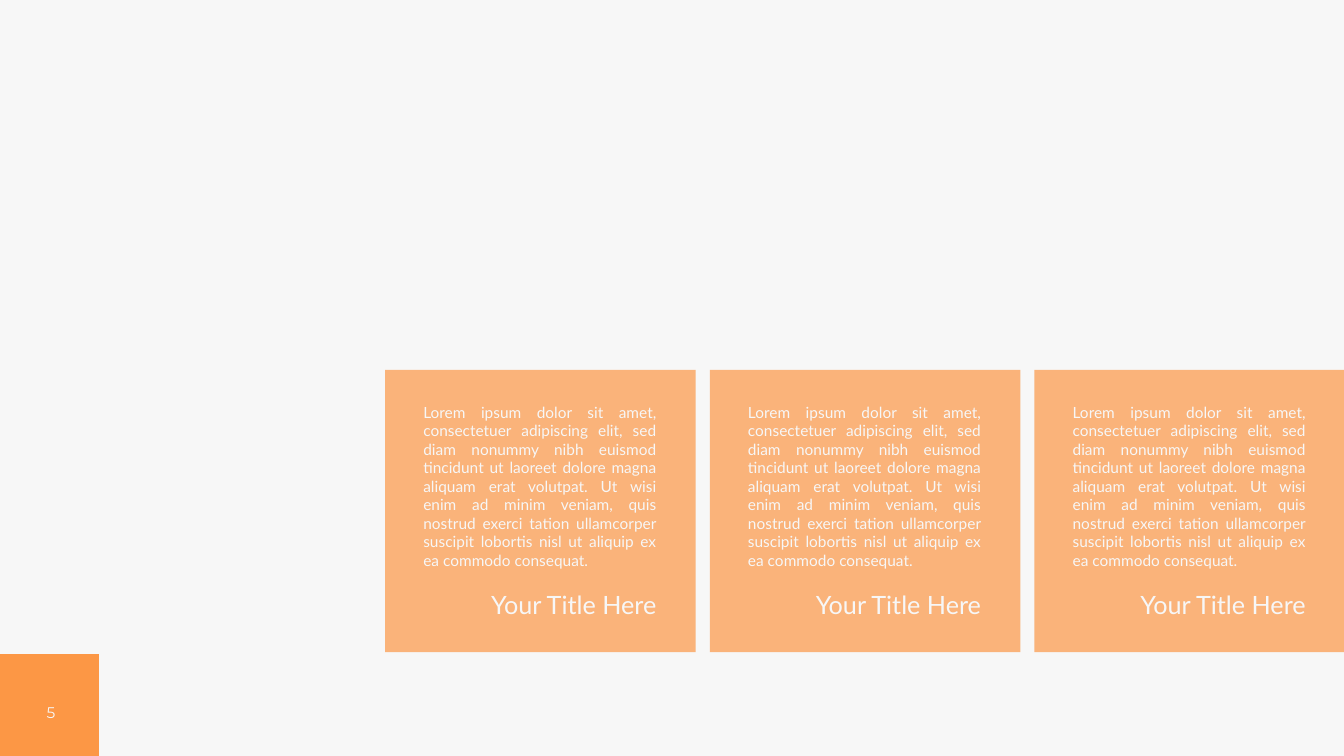
import pptx
import pptx.dml.color
import pptx.enum.shapes
import pptx.enum.text
import pptx.oxml.ns
import pptx.util
from lxml import etree
from pptx.util import Inches

ORANGE = "FC9745"
OFF_WHITE = "F7F7F7"
ALIGN = pptx.enum.text.PP_ALIGN

CARD_TITLES = ["Your Title Here"] * 3
CARD_BODY = (
    "Lorem ipsum dolor sit amet, consectetuer adipiscing elit, sed diam "
    "nonummy nibh euismod tincidunt ut laoreet dolore magna aliquam erat "
    "volutpat. Ut wisi enim ad minim veniam, quis nostrud exerci tation "
    "ullamcorper suscipit lobortis nisl ut aliquip ex ea commodo consequat."
)
CARD_LEFT, CARD_TOP, CARD_PITCH = 3.82, 3.67, 3.22


def set_color(fill, color):
    fill.solid()
    fill.fore_color.rgb = pptx.dml.color.RGBColor.from_string(color)


def add_rect(shapes, left, top, width, height, color, opacity=100):
    """Add a borderless rectangle; opacity is a percentage."""
    sp = shapes.add_shape(
        pptx.enum.shapes.MSO_SHAPE.RECTANGLE,
        Inches(left), Inches(top), Inches(width), Inches(height))
    sp.shadow.inherit = False
    sp.line.fill.background()
    set_color(sp.fill, color)
    if opacity < 100:
        qn = pptx.oxml.ns.qn
        clr = sp.fill._xPr.find(qn("a:solidFill")).find(qn("a:srgbClr"))
        etree.SubElement(clr, qn("a:alpha"), val=str(opacity * 1000))
    return sp


def add_text(shapes, text, left, top, width, height, *, size=11, font="Lato",
             color=OFF_WHITE, align=ALIGN.LEFT, wrap=True, margins=None):
    """Add a text box; margins is (left, top, right, bottom) in inches."""
    sp = shapes.add_textbox(Inches(left), Inches(top), Inches(width), Inches(height))
    tf = sp.text_frame
    tf.word_wrap = wrap
    tf.auto_size = pptx.enum.text.MSO_AUTO_SIZE.SHAPE_TO_FIT_TEXT
    if margins:
        (tf.margin_left, tf.margin_top,
         tf.margin_right, tf.margin_bottom) = map(Inches, margins)
    p = tf.paragraphs[0]
    p.alignment = align
    r = p.add_run()
    r.text = text
    r.font.size = pptx.util.Pt(size)
    r.font.name = font
    set_color(r.font.fill, color)
    return sp


def add_card(slide, left, top, title, body):
    shapes = slide.shapes.add_group_shape().shapes
    add_rect(shapes, left, top, 3.08, 2.8, ORANGE, opacity=70)
    add_text(shapes, body, left + 0.28, top + 0.28, 2.51, 1.77, align=ALIGN.JUSTIFY)
    add_text(shapes, title, left + 0.88, top + 2.13, 1.91, 0.4,
             size=18, align=ALIGN.RIGHT, wrap=False)


def add_page_number(slide, number):
    add_rect(slide.shapes, 0, 6.49, 0.98, 1.01, ORANGE)
    add_text(slide.shapes, str(number), 0, 6.98, 0.98, 0.19, font="Montserrat",
             align=ALIGN.CENTER, margins=(0.13, 0, 0.1, 0))


def main():
    prs = pptx.Presentation()
    prs.slide_width, prs.slide_height = Inches(13.33), Inches(7.5)
    slide = prs.slides.add_slide(prs.slide_layouts[6])
    set_color(slide.background.fill, OFF_WHITE)
    add_page_number(slide, 5)
    for i, title in enumerate(CARD_TITLES):
        add_card(slide, CARD_LEFT + i * CARD_PITCH, CARD_TOP, title, CARD_BODY)
    prs.save("out.pptx")


if __name__ == "__main__":
    main()
